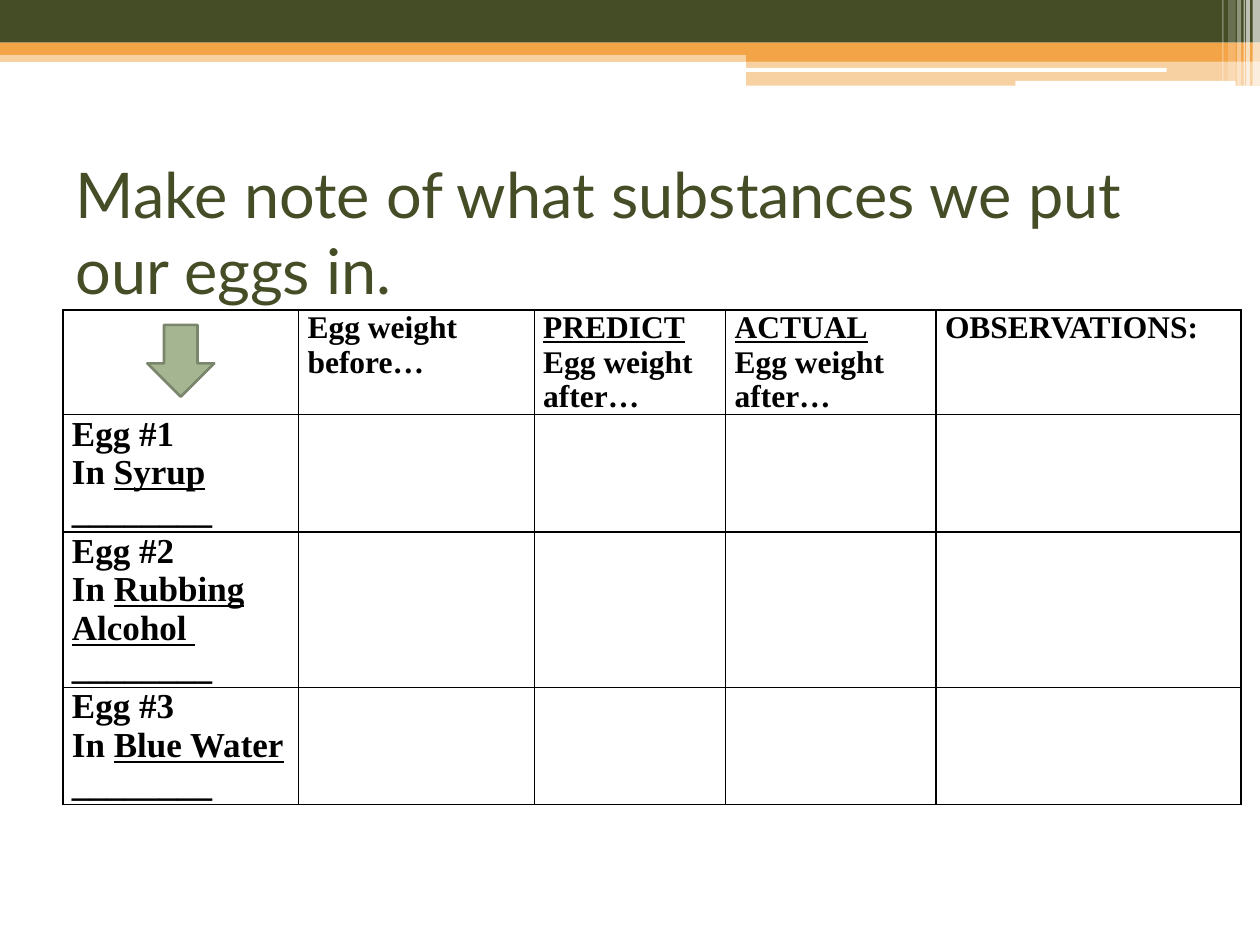
"""Build the egg experiment slide with its weight table."""
from typing import NamedTuple

from lxml import etree
from pptx import Presentation
from pptx.dml.color import RGBColor
from pptx.enum.shapes import MSO_SHAPE
from pptx.enum.text import MSO_ANCHOR, PP_ALIGN
from pptx.oxml.ns import qn
from pptx.util import Cm, Pt

RECT = MSO_SHAPE.RECTANGLE
ROUND = MSO_SHAPE.ROUNDED_RECTANGLE
ARROW = MSO_SHAPE.DOWN_ARROW
LEFT = PP_ALIGN.LEFT
MIDDLE = MSO_ANCHOR.MIDDLE
COLORS = {"olive": "444D26", "orange": "F3A447", "white": "FFFFFF",
          "black": "000000", "sage": "A5B592", "edge": "7A866C"}


class Strip(NamedTuple):
    left: float
    top: float
    width: float
    height: float
    color: str
    alpha: int = 100
    kind: int = RECT


class Part(NamedTuple):
    text: str
    under: bool = False


STRIPS = [
    Strip(0, 1.02, 25.4, 0.23, "orange", 50),
    Strip(0, 0, 25.4, 0.86, "olive"),
    Strip(0, 0.86, 25.4, 0.25, "orange"),
    Strip(15.04, 0.99, 10.36, 0.25, "orange"),
    Strip(15.04, 1.22, 10.36, 0.51, "orange", 50),
    Strip(15.01, 1.37, 8.51, 0.08, "white", kind=ROUND),
    Strip(20.47, 1.63, 4.44, 0.1, "white", kind=ROUND),
    Strip(25.25, 0, 0.15, 1.73, "white", 65),
    Strip(25.12, 0, 0.08, 1.73, "white", 65),
    Strip(25.07, 0, 0.03, 1.73, "white", 60),
    Strip(24.94, 0, 0.08, 1.73, "white", 40),
    Strip(24.76, 0, 0.15, 1.63, "white", 20),
    Strip(24.64, 0, 0.03, 1.63, "white", 30),
]
COLS = [4.75, 4.75, 3.86, 4.24, 6.15]
ROWS = [2.11, 2.36, 3.14, 2.36]
AFTER = [Part("Egg weight after…")]
HEADS = [
    [],
    [[Part("Egg weight before…")]],
    [[Part("PREDICT", True)], AFTER],
    [[Part("ACTUAL", True)], AFTER],
    [[Part("OBSERVATIONS:")]],
]
BATHS = ["Syrup", "Rubbing Alcohol ", "Blue Water"]


def rgb(name: str) -> RGBColor:
    """Return the named colour."""
    return RGBColor.from_string(COLORS[name])


def draw_strip(shapes, strip: Strip):
    """Draw a plain filled shape and return it."""
    shape = shapes.add_shape(strip.kind, *map(Cm, strip[:4]))
    shape.shadow.inherit = False
    shape.fill.solid()
    shape.fill.fore_color.rgb = rgb(strip.color)
    shape.line.fill.background()
    if strip.alpha < 100:
        tint = next(shape._element.spPr.iter(qn("a:srgbClr")))
        etree.SubElement(tint, qn("a:alpha"), val=str(strip.alpha * 1000))
    return shape


def draw_edges(cell) -> None:
    """Give a cell four thin black borders."""
    props = cell._tc.get_or_add_tcPr()
    for side in "LRTB":
        line = etree.SubElement(props, qn(f"a:ln{side}"), w=str(Pt(1)))
        fill = etree.SubElement(line, qn("a:solidFill"))
        etree.SubElement(fill, qn("a:srgbClr"), val=COLORS["black"])


def fill_cell(cell, lines: list[list[Part]], size: int) -> None:
    """Format a cell and write its lines."""
    draw_edges(cell)
    cell.fill.background()
    cell.margin_left = cell.margin_right = Cm(0.18)
    cell.margin_top = cell.margin_bottom = 0
    frame = cell.text_frame
    for i, parts in enumerate(lines):
        para = frame.add_paragraph() if i else frame.paragraphs[0]
        font = para.font
        font.name, font.size, font.bold = "Times New Roman", Pt(size), True
        font.color.rgb = rgb("black")
        for part in parts:
            run = para.add_run()
            run.text = part.text
            if part.under:
                run.font.underline = True


def draw_table(shapes) -> None:
    """Draw the table of egg weights."""
    table = shapes.add_table(len(ROWS), len(COLS), Cm(1.27), Cm(6.25),
                             Cm(sum(COLS)), Cm(sum(ROWS))).table
    table.first_row = table.horz_banding = False
    for col, width in zip(table.columns, COLS):
        col.width = Cm(width)
    for row, height in zip(table.rows, ROWS):
        row.height = Cm(height)
    for c, lines in enumerate(HEADS):
        fill_cell(table.cell(0, c), lines, 18)
    for r, bath in enumerate(BATHS, 1):
        label = [[Part(f"Egg #{r}")], [Part("In "), Part(bath, True)],
                 [Part("_" * 8)]]
        for c in range(len(COLS)):
            fill_cell(table.cell(r, c), [] if c else label, 20)


def set_title(title) -> None:
    """Place and format the title."""
    title.left, title.top = Cm(1.27), Cm(3.18)
    title.width, title.height = Cm(22.86), Cm(2.97)
    frame = title.text_frame
    frame.text = "Make note of what substances we put our eggs in."
    frame.vertical_anchor = MIDDLE
    para = frame.paragraphs[0]
    para.alignment = LEFT
    para.font.name, para.font.size = "Lato", Pt(36)
    para.font.color.rgb = rgb("olive")


def main() -> None:
    """Build and save the slide."""
    deck = Presentation()
    deck.slide_width, deck.slide_height = Cm(25.4), Cm(19.05)
    slide = deck.slides.add_slide(deck.slide_layouts[5])
    shapes = slide.shapes
    for strip in STRIPS:
        draw_strip(shapes, strip)
    set_title(shapes.title)
    draw_table(shapes)
    arrow = draw_strip(shapes, Strip(2.97, 6.55, 1.35, 1.45, "sage", kind=ARROW))
    arrow.line.color.rgb = rgb("edge")
    arrow.line.width = Pt(1.5)
    deck.save("out.pptx")


if __name__ == "__main__":
    main()
